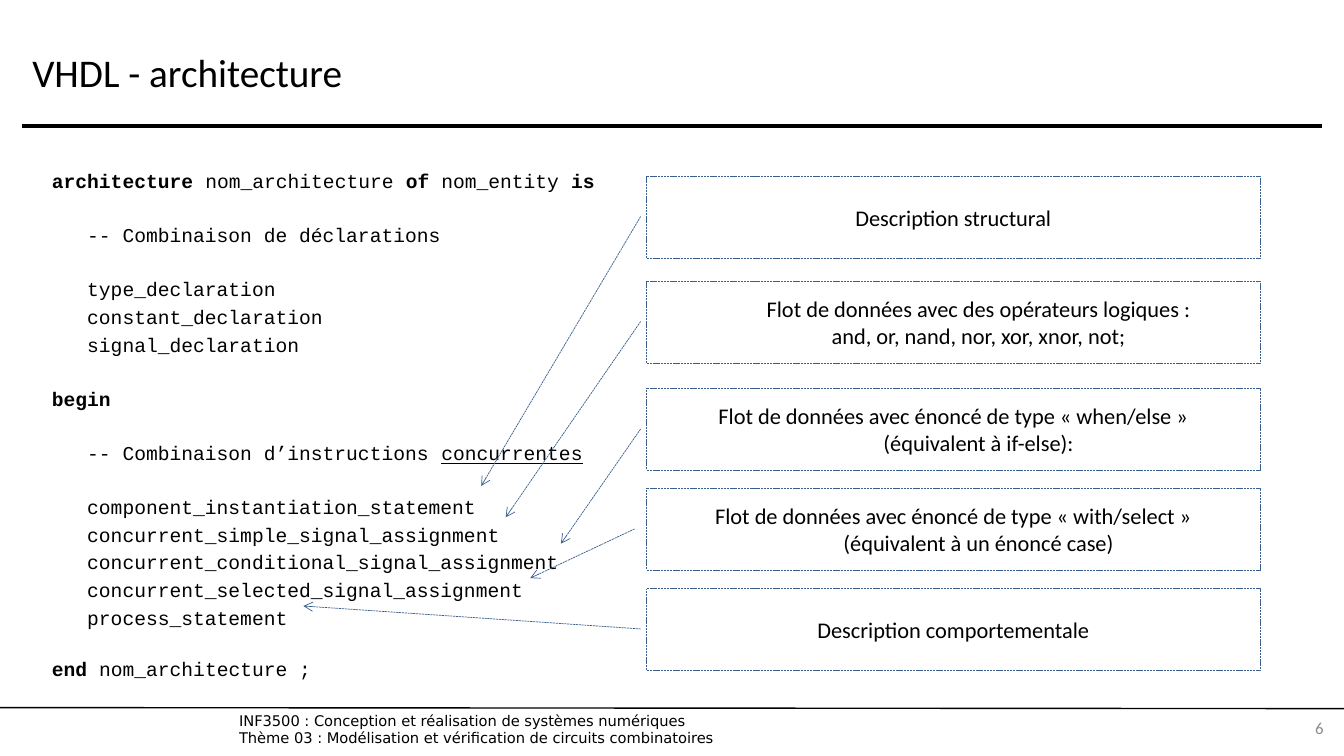
from lxml import etree
from pptx import Presentation
from pptx.dml.color import RGBColor
from pptx.enum.dml import MSO_LINE
from pptx.enum.shapes import MSO_CONNECTOR, MSO_SHAPE
from pptx.enum.text import MSO_ANCHOR, PP_ALIGN
from pptx.oxml.ns import qn
from pptx.util import Inches, Pt

BLACK = RGBColor(0x00, 0x00, 0x00)
GREY = RGBColor(0x8C, 0x8C, 0x8C)
BLUE = RGBColor(0x3A, 0x5F, 0x8C)
LEFT, CENTER, RIGHT = PP_ALIGN.LEFT, PP_ALIGN.CENTER, PP_ALIGN.RIGHT
TOP, MIDDLE = MSO_ANCHOR.TOP, MSO_ANCHOR.MIDDLE
STRAIGHT = MSO_CONNECTOR.STRAIGHT
CALLOUT = MSO_SHAPE.LINE_CALLOUT_1
DASH = MSO_LINE.SQUARE_DOT
COLS, ROWS = 160, 90

CODE = [
    [[("architecture ", "b"), ("nom_architecture ", ""), ("of ", "b"),
      ("nom_entity ", ""), ("is", "b")]],
    [[("   -- Combinaison de déclarations", "")]],
    [[("   type_declaration", "")],
     [("   constant_declaration", "")],
     [("   signal_declaration", "")]],
    [[("begin", "b")]],
    [[("   -- Combinaison d’instructions ", ""), ("concurrentes", "u")]],
    [[("   component_instantiation_statement", "")],
     [("   concurrent_simple_signal_assignment", "")],
     [("   concurrent_conditional_signal_assignment", "")],
     [("   concurrent_selected_signal_assignment", "")],
     [("   process_statement", "")]],
    [[("end ", "b"), ("nom_architecture ;", "")]],
]

CALLOUTS = [
    (21, (0.49, -0.01, 3.78, -0.27), [("Description structural", 0)]),
    (33.5, (0.49, -0.01, 2.88, -0.23),
     [("Flot de données avec des opérateurs logiques :", 0.5),
      ("and, or, nand, nor, xor, xnor, not;", 0.5)]),
    (46.2, (0.5, -0.01, 1.9, -0.14),
     [("Flot de données avec énoncé de type « when/else »", 0),
      ("(équivalent à if-else):", 0.5)]),
    (58.1, (0.5, -0.02, 1.1, -0.19),
     [("Flot de données avec énoncé de type « with/select »", 0),
      ("(équivalent à un énoncé case)", 0.5)]),
    (70.1, (0.49, -0.01, 0.21, -0.56), [("Description comportementale", 0)]),
]

FOOTER = [
    "INF3500 : Conception et réalisation de systèmes numériques",
    "Thème 03 : Modélisation et vérification de circuits combinatoires",
]


class Deck:
    font, code_font, footer_font = "Calibri", "Courier New", "DejaVu Sans"
    code_size, code_spacing, code_gap = 14, 1.12, 18.8

    def __init__(self):
        self.prs = Presentation()
        self.prs.slide_width, self.prs.slide_height = Inches(13.33), Inches(7.5)
        self.slide = self.prs.slides.add_slide(self.prs.slide_layouts[5])

    def x(self, cols):
        return round(self.prs.slide_width * cols / COLS)

    def y(self, rows):
        return round(self.prs.slide_height * rows / ROWS)

    def box(self, left, top, width, height):
        return self.x(left), self.y(top), self.x(width), self.y(height)

    def run(self, p, text, size, font, color=BLACK, style=""):
        r = p.add_run()
        r.text = text
        r.font.size, r.font.name = Pt(size), font
        r.font.color.rgb = color
        r.font.bold = style == "b"
        r.font.underline = style == "u"

    def paragraph(self, tf, first, align=LEFT):
        p = tf.paragraphs[0] if first else tf.add_paragraph()
        p.alignment = align
        return p

    def title(self, text, *area):
        sp = self.slide.shapes.title
        sp.left, sp.top, sp.width, sp.height = self.box(*area)
        tf = sp.text_frame
        tf.vertical_anchor = MIDDLE
        self.run(self.paragraph(tf, True), text, 28, self.font)

    def frame(self, anchor, *area):
        tf = self.slide.shapes.add_textbox(*self.box(*area)).text_frame
        tf.word_wrap, tf.vertical_anchor = True, anchor
        return tf

    def line(self, x1, y1, x2, y2, width):
        sp = self.slide.shapes.add_connector(
            STRAIGHT, self.x(x1), self.y(y1), self.x(x2), self.y(y2))
        sp.line.color.rgb, sp.line.width = BLACK, Pt(width)
        etree.SubElement(sp._element.spPr, qn("a:effectLst"))

    def footer(self, lines, *area):
        tf = self.frame(MIDDLE, *area)
        tf.margin_left = Inches(0.08)
        tf.margin_top = tf.margin_right = tf.margin_bottom = 0
        for i, text in enumerate(lines):
            self.run(self.paragraph(tf, i == 0), text, 10.5, self.footer_font)

    def number(self, text, *area):
        p = self.paragraph(self.frame(MIDDLE, *area), True, RIGHT)
        self.run(p, text, 12, self.font, GREY)

    def code(self, stanzas, *area):
        tf = self.frame(TOP, *area)
        for i, stanza in enumerate(stanzas):
            for j, runs in enumerate(stanza):
                p = self.paragraph(tf, i == j == 0)
                p.line_spacing = 1.0 if i == len(stanzas) - 1 else self.code_spacing
                p.space_before = Pt(self.code_gap if i and j == 0 else 0)
                p.space_after = Pt(1)
                for text, style in runs:
                    self.run(p, text, self.code_size, self.code_font, style=style)

    def callout(self, lines, pointer, *area):
        sp = self.slide.shapes.add_shape(CALLOUT, *self.box(*area))
        for i, value in enumerate(pointer):
            sp.adjustments[i] = value
        sp.shadow.inherit = False
        sp.fill.background()
        sp.line.color.rgb, sp.line.width = BLUE, Pt(0.5)
        sp.line.dash_style = DASH
        etree.SubElement(sp._element.spPr.find(qn("a:ln")), qn("a:tailEnd"), type="arrow")
        tf = sp.text_frame
        tf.word_wrap, tf.vertical_anchor = True, MIDDLE
        for i, (text, indent) in enumerate(lines):
            p = self.paragraph(tf, i == 0, CENTER)
            p._p.get_or_add_pPr().set("marL", str(Inches(indent)))
            self.run(p, text, 16, self.font)


def main():
    deck = Deck()
    deck.line(2.64, 15, 157.36, 15, 3)
    deck.footer(FOOTER, 27.5, 84.7, 89.8, 4.2)
    deck.line(0, 84.24, COLS, 84.36, 1)
    deck.title("VHDL - architecture", 2.64, 2, 154.72, 13)
    deck.number("6", 150.75, 84.24, 8, 4.8)
    deck.code(CODE, 5, 19.2, 70.6, 61)
    for row, pointer, lines in CALLOUTS:
        deck.callout(lines, pointer, 77, row, 73, 9.75)
    deck.prs.save("out.pptx")


if __name__ == "__main__":
    main()
